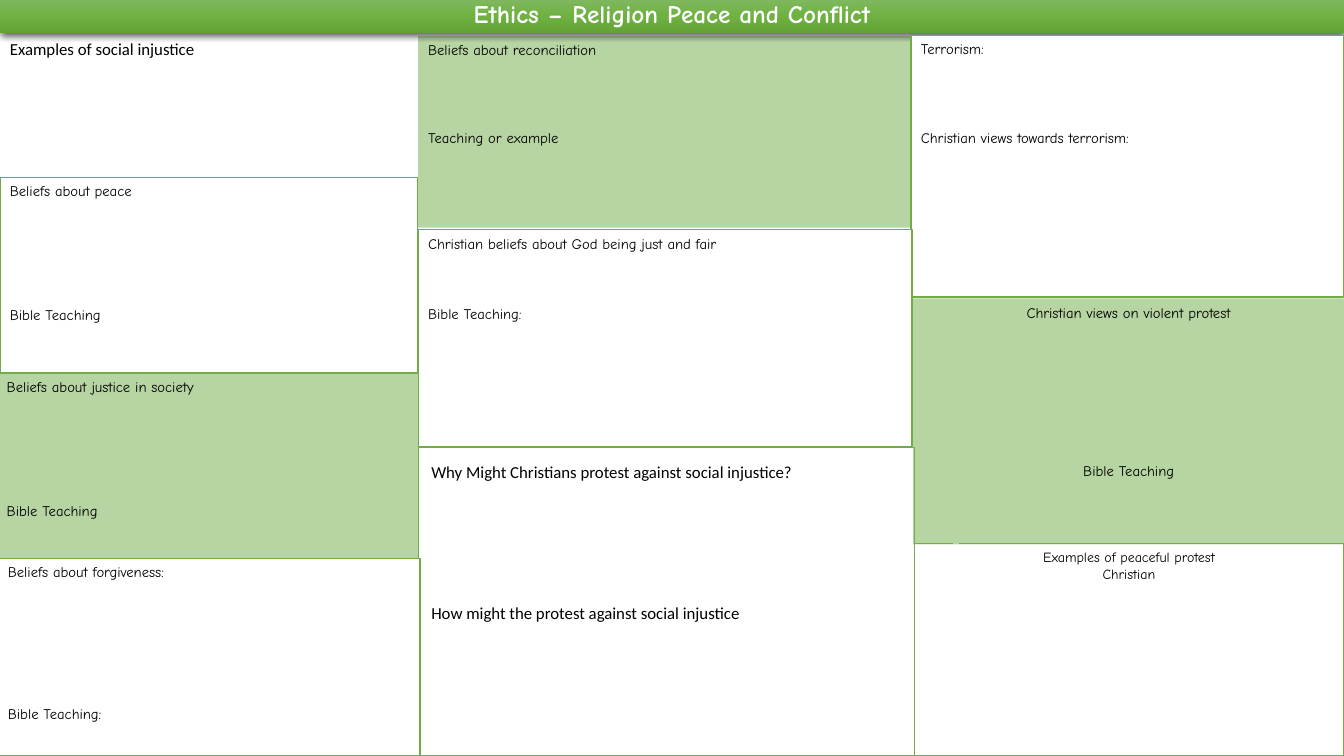
import copy

import pptx
import pptx.dml.color
import pptx.enum.shapes
import pptx.enum.text
import pptx.oxml
import pptx.oxml.ns
import pptx.util

Cm = pptx.util.Cm
Pt = pptx.util.Pt
qn = pptx.oxml.ns.qn
ALIGN = pptx.enum.text.PP_ALIGN
ANCHOR = pptx.enum.text.MSO_ANCHOR

COLORS = {
    "green": "70AD47", "white": "FFFFFF", "black": "000000",
    "light": "81B861", "middle": "6FB242", "deep": "62A336",
}
STYLES = {
    "outlined": {"fill": "white", "line": "green", "width": 1},
    "tinted": {"fill": "green", "alpha": 50},
    "frame": {"line": "green", "width": 0.75},
    "sliver": {"fill": "white", "line": "white", "width": 1},
    "title": {"gradient": ["light", "middle", "deep"]},
    "plain": {},
}
BODY = {"font": "Comic Neue", "size": 10.5, "line": 12.6}
SMALL = {"font": "Comic Neue", "size": 10, "line": 12}
QUESTION = {"font": "Calibri", "size": 12, "line": 14.4}
HEADING = {"font": "Comic Neue", "size": 18, "line": 21.6,
           "color": "white", "bold": True, "spacing": 0.9, "anchor": ANCHOR.MIDDLE}

# style, (left, top, width, height) in cm, text style, centred, lines of space between, paragraphs
PANELS = [
    ("outlined", (23.04, 13.69, 10.82, 5.36), SMALL, True, 0,
     ["Examples of peaceful protest", "Christian"]),
    ("tinted", (10.54, 0.91, 12.45, 4.83), BODY, False, 4,
     ["Beliefs about reconciliation", "Teaching or example"]),
    ("title", (0, -0.05, 33.87, 0.89), HEADING, True, 0,
     ["Ethics – Religion Peace and Conflict"]),
    ("outlined", (0, 4.47, 10.52, 4.93), BODY, False, 6,
     ["Beliefs about peace", "Bible Teaching"]),
    ("sliver", (24.03, 13.16, 0.13, 3.15), BODY, False, 0, []),
    ("outlined", (22.96, 0.89, 10.9, 6.6), BODY, False, 4,
     ["Terrorism:", "Christian views towards terrorism:"]),
    ("tinted", (-0.08, 9.4, 10.64, 4.67), BODY, False, 6,
     ["Beliefs about justice in society", "Bible Teaching"]),
    ("tinted", (23.01, 7.52, 10.87, 6.2), BODY, True, 8,
     ["Christian views on violent protest", "Bible Teaching"]),
    ("frame", (10.54, 11.28, 12.5, 7.75), BODY, False, 0, []),
    ("outlined", (10.54, 5.79, 12.45, 5.46), BODY, False, 3,
     ["Christian beliefs about God being just and fair", "Bible Teaching:"]),
    ("outlined", (-0.05, 14.07, 10.64, 4.98), BODY, False, 7,
     ["Beliefs about forgiveness:", "Bible Teaching:"]),
    ("plain", (10.62, 11.51, 11.18, 4.37), QUESTION, False, 6,
     ["Why Might Christians protest against social injustice?",
      "How might the protest against social injustice"]),
    ("plain", (0, 0.84, 10.54, 0.76), QUESTION, False, 0,
     ["Examples of social injustice"]),
]


def rgb(name):
    return pptx.dml.color.RGBColor.from_string(COLORS[name])


def fill_gradient(shape, names):
    shape.fill.gradient()
    shape.fill.gradient_angle = 270
    stop_list = shape._element.spPr.find(".//" + qn("a:gsLst"))
    while len(stop_list) < len(names):
        stop_list.append(copy.deepcopy(stop_list[0]))
    for index, (stop, name) in enumerate(zip(shape.fill.gradient_stops, names)):
        stop.color.rgb = rgb(name)
        stop.position = index / (len(names) - 1)


def add_shadow(shape):
    effects = shape._element.spPr.find(qn("a:effectLst"))
    effects.append(pptx.oxml.parse_xml(
        '<a:outerShdw xmlns:a="http://schemas.openxmlformats.org/drawingml/2006/main" '
        'blurRad="57150" dist="19050" dir="5400000" algn="ctr" rotWithShape="0">'
        f'<a:srgbClr val="{COLORS["black"]}"><a:alpha val="63000"/></a:srgbClr></a:outerShdw>'))


def paint(shape, style):
    shape.shadow.inherit = False
    if "gradient" in style:
        fill_gradient(shape, style["gradient"])
        add_shadow(shape)
    elif "fill" in style:
        shape.fill.solid()
        shape.fill.fore_color.rgb = rgb(style["fill"])
        if "alpha" in style:
            color = shape._element.spPr.find(qn("a:solidFill"))[0]
            alpha = color.makeelement(qn("a:alpha"), {"val": str(style["alpha"] * 1000)})
            color.append(alpha)
    else:
        shape.fill.background()
    if "line" in style:
        shape.line.color.rgb = rgb(style["line"])
        shape.line.width = Pt(style["width"])
    else:
        shape.line.fill.background()


def write(shape, text_style, centred, gap, texts):
    frame = shape.text_frame
    frame.word_wrap = True
    frame.vertical_anchor = text_style.get("anchor", ANCHOR.TOP)
    frame.text = "\n".join(texts)
    for index, paragraph in enumerate(frame.paragraphs):
        paragraph.alignment = ALIGN.CENTER if centred else ALIGN.LEFT
        if "spacing" in text_style:
            paragraph.line_spacing = text_style["spacing"]
        if index and gap:
            paragraph.space_before = Pt(round(gap * text_style["line"], 1))
        for run in paragraph.runs:
            run.font.name = text_style["font"]
            run.font.size = Pt(text_style["size"])
            run.font.bold = text_style.get("bold", False)
            run.font.color.rgb = rgb(text_style.get("color", "black"))


def main():
    presentation = pptx.Presentation()
    presentation.slide_width = Cm(33.87)
    presentation.slide_height = Cm(19.05)
    slide = presentation.slides.add_slide(presentation.slide_layouts[6])
    for style, box, text_style, centred, gap, texts in PANELS:
        place = [Cm(length) for length in box]
        if style == "plain":
            shape = slide.shapes.add_textbox(*place)
        else:
            shape = slide.shapes.add_shape(pptx.enum.shapes.MSO_SHAPE.RECTANGLE, *place)
            paint(shape, STYLES[style])
        if texts:
            write(shape, text_style, centred, gap, texts)
    presentation.save("out.pptx")


if __name__ == "__main__":
    main()
